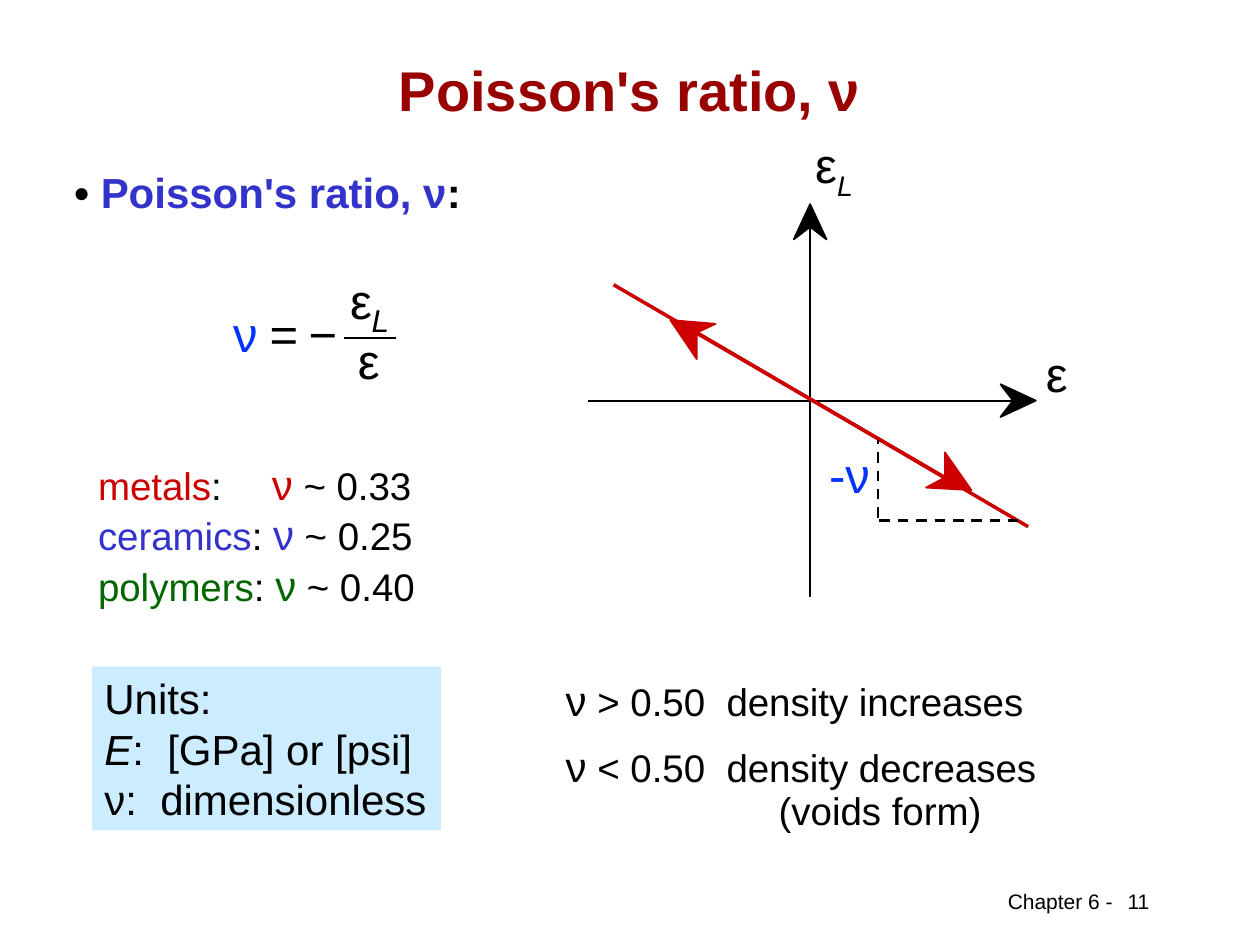
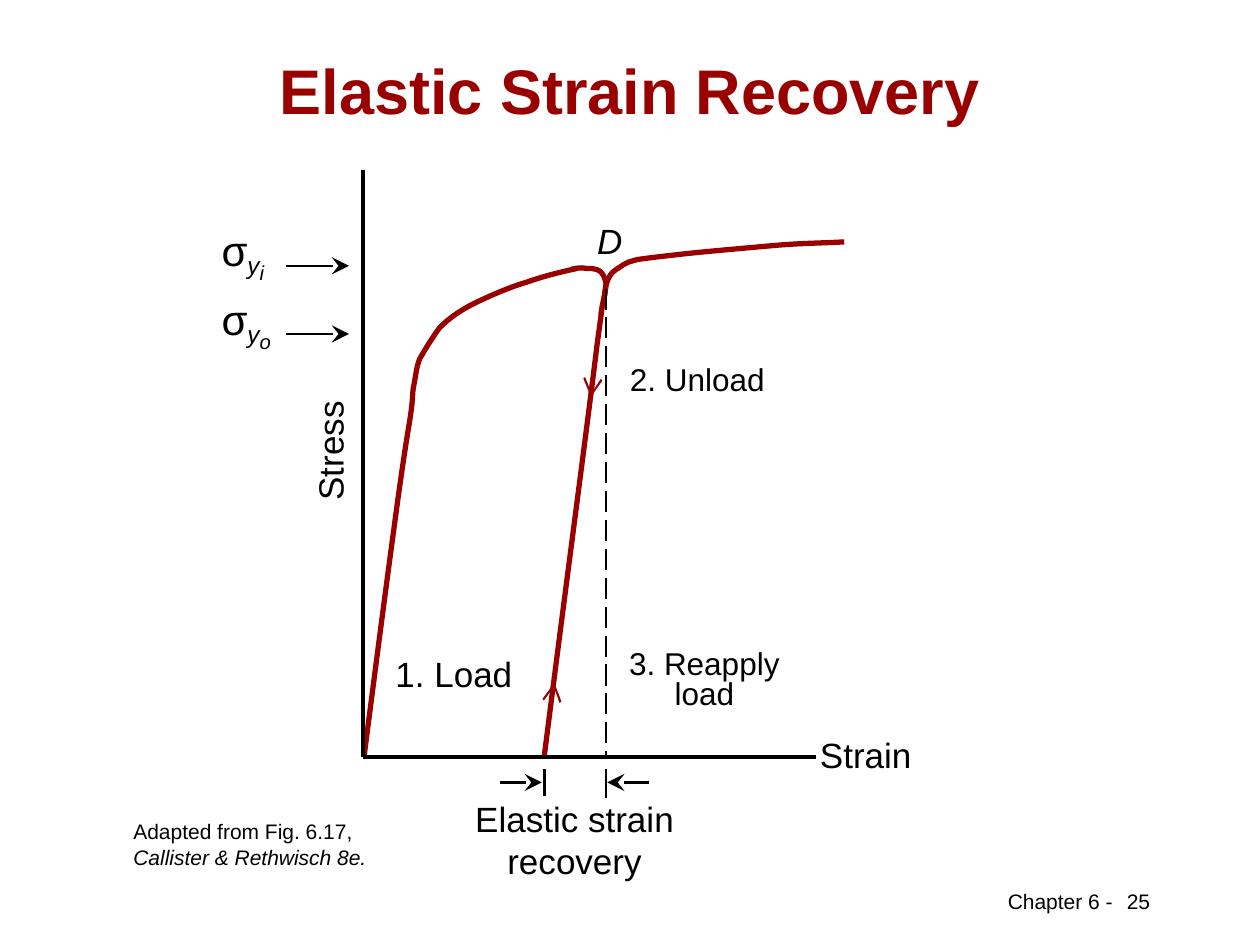
from lxml import etree
from pptx import Presentation
from pptx.dml.color import RGBColor
from pptx.enum.dml import MSO_LINE
from pptx.enum.shapes import MSO_CONNECTOR, MSO_SHAPE
from pptx.enum.text import MSO_ANCHOR, PP_ALIGN
from pptx.oxml.ns import qn
from pptx.util import Inches, Pt

LEFT, CENTER = PP_ALIGN.LEFT, PP_ALIGN.CENTER
TOP, MIDDLE = MSO_ANCHOR.TOP, MSO_ANCHOR.MIDDLE
STRAIGHT, RECTANGLE = MSO_CONNECTOR.STRAIGHT, MSO_SHAPE.RECTANGLE
DASH, LONG_DASH = MSO_LINE.DASH, MSO_LINE.LONG_DASH

FONT = "Arial"
BLACK, MAROON, RED, PURPLE = "000000", "990000", "CC0000", "3333CC"
GREEN, BLUE, PALE_BLUE = "006600", "0033FF", "CCECFF"
BREAK = ("\n", {})
rgb = RGBColor.from_string


def add_text(slide, at, paragraphs, size, inset=None, wrap=False, anchor=TOP,
             fill=None, paragraph_format=None, **base):
    """Each paragraph is a string or a list of (text, run format) pairs."""
    place = [Inches(length) for length in at]
    if fill:
        box = slide.shapes.add_shape(RECTANGLE, *place)
        box.shadow.inherit = False
        box.fill.solid()
        box.fill.fore_color.rgb = rgb(fill)
        box.line.fill.background()
    else:
        box = slide.shapes.add_textbox(*place)
    frame = box.text_frame
    frame.word_wrap = wrap
    frame.vertical_anchor = anchor
    if inset is not None:
        for side in ("left", "top", "right", "bottom"):
            setattr(frame, f"margin_{side}", Inches(inset))
    for number, runs in enumerate(paragraphs):
        paragraph = frame.add_paragraph() if number else frame.paragraphs[0]
        for name, value in {"alignment": LEFT, **(paragraph_format or {})}.items():
            setattr(paragraph, name, value)
        for text, changes in [(runs, {})] if isinstance(runs, str) else runs:
            if text == "\n":
                paragraph.add_line_break()
                continue
            run = paragraph.add_run()
            run.text = text
            values = {"name": FONT, "size": size, "color": BLACK, **base, **changes}
            for name, value in values.items():
                if name == "color":
                    run.font.color.rgb = rgb(value)
                elif name == "baseline":
                    run.font._element.set("baseline", str(value * 1000))
                else:
                    setattr(run.font, name, Pt(value) if name == "size" else value)
    return box


def add_line(slide, start, end, width, color=BLACK, dash=None, tail=None):
    connector = slide.shapes.add_connector(STRAIGHT, *map(Inches, (*start, *end)))
    connector.line.color.rgb = rgb(color)
    connector.line.width = Pt(width)
    if dash is not None:
        connector.line.dash_style = dash
    properties = connector._element.spPr
    if tail:
        etree.SubElement(properties.find(qn("a:ln")), qn("a:tailEnd"),
                         type=tail, w="lg", len="lg")
    etree.SubElement(properties, qn("a:effectLst"))


prs = Presentation()
prs.slide_width, prs.slide_height = Inches(10), Inches(7.5)

# Shared title and footer
slides = []
for title, title_size, page in (("Poisson's ratio, ν", 32, "11"),
                                ("Elastic Strain Recovery", 36, "25")):
    slide = prs.slides.add_slide(prs.slide_layouts[6])
    add_text(slide, (0.75, 0.42, 8.5, 0.58), [title], title_size, wrap=True,
             anchor=MIDDLE, paragraph_format={"alignment": CENTER},
             color=MAROON, bold=True)
    add_text(slide, (7.9, 7, 1.04, 0.3), ["Chapter 6 -"], 12)
    add_text(slide, (8.39, 7, 1.29, 0.39), [page], 12, wrap=True,
             paragraph_format={"alignment": CENTER})
    slides.append(slide)
poisson, recovery = slides

# Poisson's ratio: text
add_text(poisson, (0.59, 1.32, 4.58, 0.4),
         [[("• ", {}), ("Poisson's ratio, ν", {"color": PURPLE}), (":", {})]],
         24, inset=0, wrap=True, bold=True)
add_text(poisson, (0.73, 5.29, 2.77, 1.3),
         ["Units:", [("E", {"italic": True}), (":  [GPa] or [psi]", {})],
          "ν:  dimensionless"], 24, fill=PALE_BLUE)

density = add_text(poisson, (3.89, 5.35, 5.67, 1.35),
                   [[("ν", {"size": 24}), (" > 0.50  density increases", {})],
                    [("ν", {"size": 24}), (" < 0.50  density decreases", {}),
                     BREAK, ("\t(voids form)", {})]],
                   22, wrap=True, paragraph_format={"line_spacing": 0.9})
density.text_frame.margin_left = Inches(0.6)
density.text_frame.paragraphs[1].space_before = Pt(12)

materials = [("metals", ":\t", RED, "0.33"), ("ceramics", ": ", PURPLE, "0.25"),
             ("polymers", ": ", GREEN, "0.40")]
material_runs = []
for material, gap, color, ratio in materials:
    if material_runs:
        material_runs.append(BREAK)
    material_runs += [(material, {"color": color}), (gap, {}),
                      ("ν", {"size": 24, "color": color}), (f" ~ {ratio}", {})]
ratios = add_text(poisson, (0.68, 3.59, 3.43, 1.3), [material_runs], 22, wrap=True)

for box, position in ((density, 1.69), (ratios, 1.38)):
    paragraph = box.text_frame.paragraphs[-1]
    tab_stops = etree.SubElement(paragraph._p.get_or_add_pPr(), qn("a:tabLst"))
    etree.SubElement(tab_stops, qn("a:tab"), pos=str(Inches(position)), algn="l")

# Poisson's ratio: strain plot
arrowheads = [
    (BLACK, [(6.43, 1.62), (6.56, 1.9), (6.43, 1.8), (6.3, 1.9)]),
    (BLACK, [(8.22, 3.18), (7.94, 3.31), (8.04, 3.18), (7.94, 3.05)]),
    (RED, [(7.71, 3.89), (7.35, 3.87), (7.5, 3.79), (7.5, 3.59)]),
    (RED, [(5.32, 2.54), (5.68, 2.57), (5.53, 2.64), (5.53, 2.85)]),
]
for color, corners in arrowheads:
    tip, *others = [(Inches(x), Inches(y)) for x, y in corners]
    builder = poisson.shapes.build_freeform(*tip)
    builder.add_line_segments(others, close=True)
    arrowhead = builder.convert_to_shape()
    arrowhead.shadow.inherit = False
    arrowhead.fill.solid()
    arrowhead.fill.fore_color.rgb = rgb(color)
    arrowhead.line.color.rgb = rgb(color)
    arrowhead.line.width = Pt(1)

for start, end, width, color, dash in (
        ((6.43, 4.74), (6.43, 1.8), 1, BLACK, None),
        ((4.67, 3.18), (8.04, 3.18), 1, BLACK, None),
        ((4.87, 2.26), (7.5, 3.79), 2, RED, None),
        ((5.53, 2.64), (8.16, 4.18), 2, RED, None),
        ((6.98, 4.13), (8.08, 4.13), 1.5, BLACK, DASH),
        ((6.97, 4.11), (6.97, 3.49), 1.5, BLACK, DASH),
        ((2.73, 2.68), (3.14, 2.68), 1, BLACK, None)):  # fraction bar
    add_line(poisson, start, end, width, color, dash)

# Axis labels, slope and the parts of the equation
add_text(poisson, (6.47, 1.07, 0.32, 0.47),
         [[("ε", {}), ("L", {"italic": True, "baseline": -25})]], 28, inset=0)
for symbol, left, top, width, color in (
        ("ε", 8.3, 2.73, 0.17, BLACK), ("-ν", 6.58, 3.53, 0.33, BLUE),
        ("ε", 2.78, 2.15, 0.17, BLACK), ("ν", 1.85, 2.41, 0.2, BLUE),
        ("=", 2.14, 2.41, 0.21, BLACK), ("−", 2.45, 2.41, 0.21, BLACK),
        ("ε", 2.84, 2.62, 0.17, BLACK)):
    add_text(poisson, (left, top, width, 0.47), [symbol], 28, inset=0, color=color)
add_text(poisson, (2.95, 2.39, 0.14, 0.3), ["L"], 18, inset=0, italic=True)

# Elastic strain recovery: each curve is a start point, then three points
# (two controls and an end) for every cubic Bézier segment
load_curve = [
    (2.89, 6), (2.98, 5.3), (3.07, 4.61), (3.13, 4.17),
    (3.19, 3.72), (3.22, 3.53), (3.25, 3.35), (3.28, 3.16), (3.27, 3.16), (3.28, 3.08),
    (3.3, 2.99), (3.3, 2.93), (3.33, 2.85), (3.37, 2.78), (3.43, 2.68), (3.49, 2.6),
    (3.56, 2.53), (3.63, 2.48), (3.74, 2.42), (3.86, 2.36), (4.04, 2.28), (4.18, 2.24),
    (4.32, 2.19), (4.45, 2.16), (4.58, 2.13)]
reload_curve = [
    (4.8, 2.35), (4.8, 2.3), (4.81, 2.24), (4.84, 2.19),
    (4.86, 2.15), (4.91, 2.13), (4.95, 2.1), (4.98, 2.08), (4.99, 2.08), (5.06, 2.06),
    (5.13, 2.05), (5.21, 2.04), (5.39, 2.02), (5.56, 2), (5.91, 1.97), (6.13, 1.95),
    (6.35, 1.93), (6.53, 1.93), (6.7, 1.92)]
unload_curve = [
    (4.53, 2.14), (4.57, 2.13), (4.61, 2.12), (4.65, 2.13),
    (4.68, 2.13), (4.73, 2.13), (4.76, 2.15), (4.78, 2.17), (4.8, 2.19), (4.81, 2.25),
    (4.81, 2.31), (4.78, 2.41), (4.77, 2.49), (4.76, 2.57), (4.82, 2.14), (4.74, 2.73),
    (4.67, 3.31), (4.49, 4.66), (4.32, 6)]
for curve_points in (load_curve, reload_curve, unload_curve):
    start, *others = [(Inches(x), Inches(y)) for x, y in curve_points]
    builder = recovery.shapes.build_freeform(*start)
    builder.add_line_segments(others, close=False)
    curve = builder.convert_to_shape()
    # Join every three straight steps into one Bézier segment
    outline = next(curve._element.iter(qn("a:path")))
    steps = outline.findall(qn("a:lnTo"))
    for first in range(0, len(steps), 3):
        segment = etree.SubElement(outline, qn("a:cubicBezTo"))
        for step in steps[first:first + 3]:
            segment.append(step[0])
            outline.remove(step)
    curve.shadow.inherit = False
    curve.fill.background()
    curve.line.color.rgb = rgb(MAROON)
    curve.line.width = Pt(3)

# Axes, direction arrows, recovery markers and yield stress arrows
for start, end, width, color, dash, tail in (
        ((2.88, 1.35), (2.88, 6.01), 2.25, BLACK, None, None),
        ((2.88, 6.01), (6.48, 6.01), 2.25, BLACK, None, None),
        ((4.36, 5.7), (4.4, 5.42), 1.25, MAROON, DASH, "arrow"),
        ((4.72, 2.88), (4.69, 3.15), 1.25, MAROON, DASH, "arrow"),
        ((4.81, 2.29), (4.81, 6), 1.5, BLACK, LONG_DASH, None),
        ((3.97, 6.21), (4.3, 6.21), 1.5, BLACK, None, "stealth"),
        ((5.15, 6.21), (4.82, 6.21), 1.5, BLACK, None, "stealth"),
        ((4.32, 6.1), (4.32, 6.32), 1.5, BLACK, None, None),
        ((4.81, 6.1), (4.81, 6.33), 1.5, BLACK, None, None),
        ((2.27, 2.65), (2.77, 2.65), 1.5, BLACK, None, "stealth"),
        ((2.27, 2.11), (2.77, 2.11), 1.5, BLACK, None, "stealth")):
    add_line(recovery, start, end, width, color, dash, tail)

for subscript, top, width in (("i", 1.73, 0.55), ("o", 2.28, 0.61)):
    add_text(recovery, (1.66, top, width, 0.5),
             [[("σ", {}), ("y", {"italic": True, "baseline": -20}),
               (subscript, {"italic": True, "size": 20, "baseline": -40})]], 24)

stress = add_text(recovery, (2.12, 3.36, 0.99, 0.43), ["Stress"], 20)
stress.rotation = 270
add_text(recovery, (6.41, 5.77, 0.93, 0.43), ["Strain"], 20)
add_text(recovery, (3.04, 5.13, 1.13, 0.43), ["1. Load"], 20)
add_text(recovery, (4.64, 1.69, 0.4, 0.43), ["D"], 20, italic=True)
for at, lines, size, spacing in (
        ((4.9, 2.87, 1.27, 0.34), ["2. Unload"], 18, 0.8),
        ((4.89, 5.12, 1.4, 0.58), ["3. Reapply", "load"], 18, 0.8),
        ((3.67, 6.28, 1.78, 0.77), ["Elastic strain", "recovery"], 20, 1.0)):
    add_text(recovery, at, lines, size,
             paragraph_format={"alignment": CENTER, "line_spacing": spacing})
add_text(recovery, (0.96, 6.45, 2.25, 0.5),
         [[("Adapted from Fig. 6.17, ", {}),
           ("Callister & Rethwisch 8e.", {"italic": True})]], 12, wrap=True)

prs.save("out.pptx")
